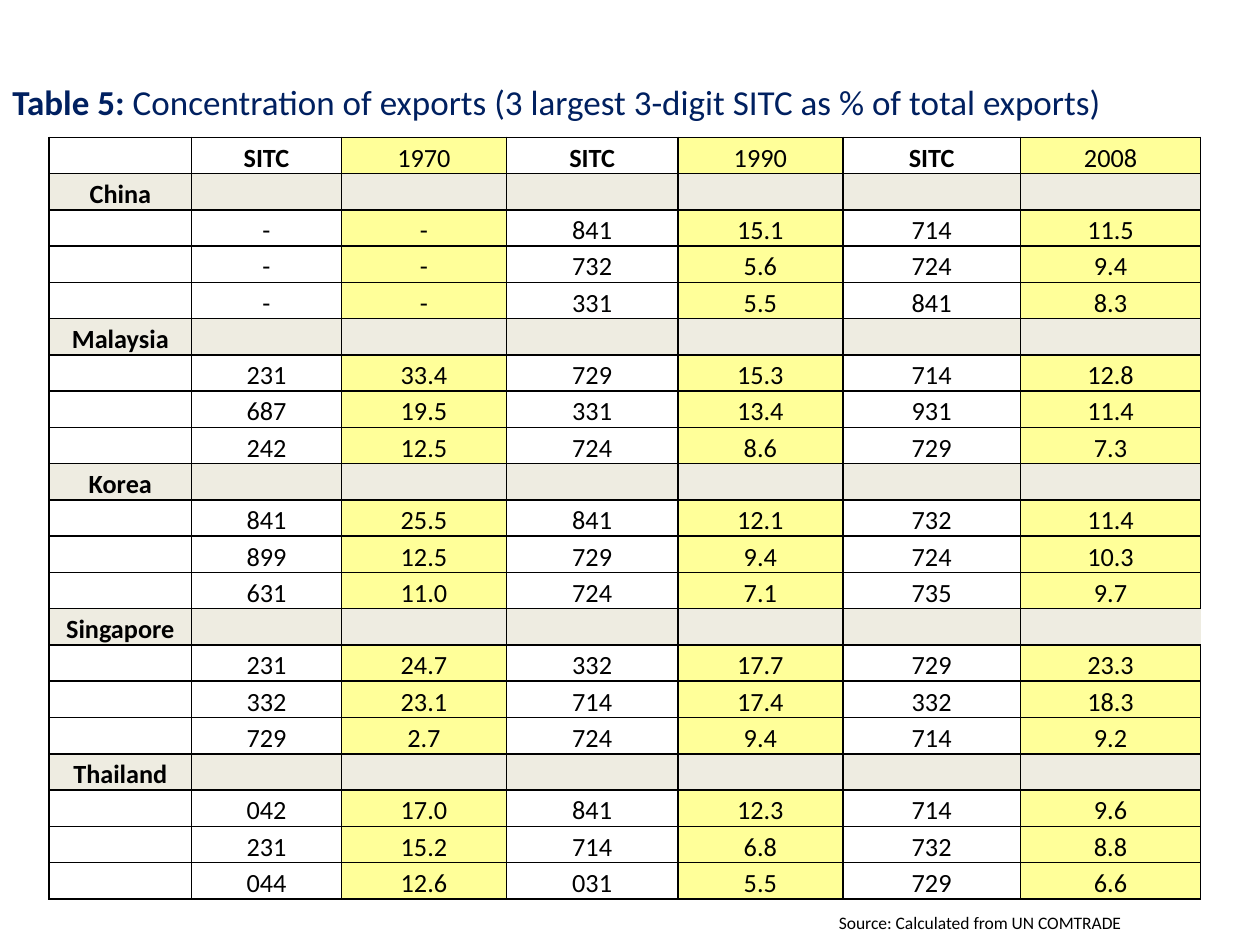
from lxml import etree
from pptx import Presentation
from pptx.dml.color import RGBColor
from pptx.enum.text import MSO_ANCHOR, PP_ALIGN
from pptx.oxml.ns import qn
from pptx.util import Inches, Pt

CENTER, MIDDLE = PP_ALIGN.CENTER, MSO_ANCHOR.MIDDLE
NAVY = RGBColor(0x00, 0x20, 0x60)
BLACK = RGBColor(0x00, 0x00, 0x00)
YELLOW = RGBColor(0xFF, 0xFF, 0x99)
BEIGE = RGBColor(0xEE, 0xEC, 0xE1)
FONT = "Calibri"

prs = Presentation()
prs.slide_width, prs.slide_height = Inches(10), Inches(7.5)
X, Y = prs.slide_width / 100, prs.slide_height / 100  # one percent of the slide
s = prs.slides.add_slide(prs.slide_layouts[6])


def style(r, size, color, bold=False):
    r.font.name, r.font.size, r.font.bold = FONT, Pt(size), bold
    r.font.color.rgb = color


def border(cell, side, visible=True):
    ln = etree.SubElement(cell._tc.get_or_add_tcPr(), qn(f"a:ln{side}"), w=str(Pt(1)))
    if visible:
        fill = etree.SubElement(ln, qn("a:solidFill"))
        etree.SubElement(fill, qn("a:srgbClr"), val=str(BLACK))
    else:
        etree.SubElement(ln, qn("a:noFill"))


# Title and source line
captions = [
    ((0, 7.87, 100, 5.87), 20, NAVY,
     [("Table 5: ", True),
      ("Concentration of exports (3 largest 3-digit SITC as % of total exports)", False)]),
    ((65.6, 95.87, 31.3, 3.6), 10, BLACK, [("Source: Calculated from UN COMTRADE", False)]),
]
for (x, y, w, h), size, color, runs in captions:
    tf = s.shapes.add_textbox(int(x * X), int(y * Y), int(w * X), int(h * Y)).text_frame
    tf.word_wrap = True
    for text, bold in runs:
        r = tf.paragraphs[0].add_run()
        r.text = text
        style(r, size, color, bold)

# Export shares: three SITC code and percentage pairs per row
header = ["", "SITC", "1970", "SITC", "1990", "SITC", "2008"]
exports = {
    "China": ["- - 841 15.1 714 11.5", "- - 732 5.6 724 9.4", "- - 331 5.5 841 8.3"],
    "Malaysia": ["231 33.4 729 15.3 714 12.8", "687 19.5 331 13.4 931 11.4",
                 "242 12.5 724 8.6 729 7.3"],
    "Korea": ["841 25.5 841 12.1 732 11.4", "899 12.5 729 9.4 724 10.3",
              "631 11.0 724 7.1 735 9.7"],
    "Singapore": ["231 24.7 332 17.7 729 23.3", "332 23.1 714 17.4 332 18.3",
                  "729 2.7 724 9.4 714 9.2"],
    "Thailand": ["042 17.0 841 12.3 714 9.6", "231 15.2 714 6.8 732 8.8",
                 "044 12.6 031 5.5 729 6.6"],
}
rows = [header]
for country, lines in exports.items():
    rows.append([country] + [""] * 6)
    rows += [[""] + line.split() for line in lines]

# Table grid
col_shares = [11.3, 11.9, 13.1, 13.6, 13.1, 14.1, 14.3]
row_share = 3.83
table = s.shapes.add_table(len(rows), len(col_shares), int(3.9 * X), int(14.53 * Y),
                           int(sum(col_shares) * X),
                           int(len(rows) * row_share * Y)).table
table.first_row = table.horz_banding = False
for col, share in zip(table.columns, col_shares):
    col.width = int(share * X)
for row in table.rows:
    row.height = int(row_share * Y)

# Cells: beige country rows, yellow percentage columns
for i, values in enumerate(rows):
    is_country = values[0] in exports
    for j, value in enumerate(values):
        cell = table.cell(i, j)
        cell.margin_left = cell.margin_right = Inches(0.07)
        cell.margin_top = cell.margin_bottom = 0
        cell.vertical_anchor = MIDDLE
        for side in "LRTB":
            border(cell, side, not (values[0] == "Singapore" and j == 6 and side == "R"))
        if is_country or (j > 0 and j % 2 == 0):
            cell.fill.solid()
            cell.fill.fore_color.rgb = BEIGE if is_country else YELLOW
        else:
            cell.fill.background()
        p = cell.text_frame.paragraphs[0]
        p.text = value
        p.alignment = CENTER
        if value:
            p.line_spacing = 1.15
            style(p.runs[0], 15, BLACK, is_country or value == "SITC")
        else:
            etree.SubElement(p._p, qn("a:endParaRPr"), sz="1500")

prs.save("out.pptx")
